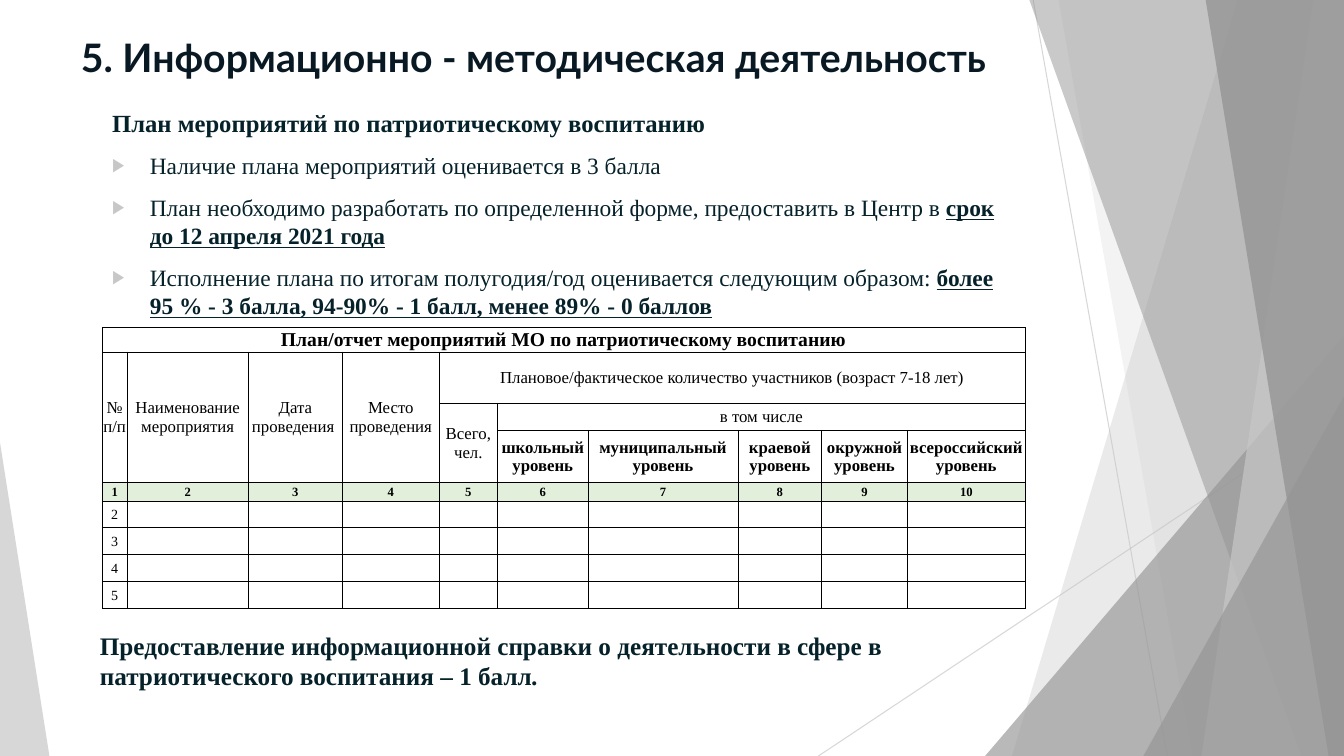
from collections import namedtuple
from dataclasses import dataclass

import pptx
import pptx.dml.color
import pptx.enum.shapes
import pptx.enum.text
import pptx.oxml
import pptx.oxml.ns
import pptx.util

Pt = pptx.util.Pt
qn = pptx.oxml.ns.qn
Align = pptx.enum.text.PP_ALIGN
Anchor = pptx.enum.text.MSO_ANCHOR
Shapes = pptx.enum.shapes.MSO_SHAPE
Box = namedtuple("Box", "left top width height")


@dataclass(frozen=True)
class Theme:
    light: str = "C7C7C7"
    dark: str = "959595"
    title: str = "091924"
    text: str = "05212A"
    black: str = "000000"
    number_row: str = "E2EFDA"
    title_font: str = "Lato"
    body_font: str = "Times New Roman"
    title_size: float = 28
    lead_size: float = 17.6
    body_size: float = 16.7
    note_size: float = 18
    caption_size: float = 14
    header_size: float = 12
    number_size: float = 9
    index_size: float = 10


THEME = Theme()
COLUMNS = [18, 86.4, 67.3, 69.1, 41.7, 64.7, 107.1, 59.8, 61.2, 84.2]
# The caption row grows to the height of its text.
ROWS = [2.9, 36.7, 19.4, 37.2, 13.2, 19.2, 19.2, 19.2, 19.2]
# row, column, rows spanned, columns spanned, wording
HEADERS = [
    (1, 0, 3, 1, "№ п/п"),
    (1, 1, 3, 1, "Наименование мероприятия"),
    (1, 2, 3, 1, "Дата проведения "),
    (1, 3, 3, 1, "Место проведения"),
    (1, 4, 1, 6, "Плановое/фактическое количество участников (возраст 7-18 лет)"),
    (2, 4, 2, 1, "Всего, чел."),
    (2, 5, 1, 5, "в том числе"),
]
LEVELS = ["школьный", "муниципальный", "краевой", "окружной", "всероссийский"]
BULLETS = [
    ("Наличие плана мероприятий оценивается в 3 балла", ""),
    ("План необходимо разработать по определенной форме, предоставить в Центр в ",
     "срок до 12 апреля 2021 года"),
    ("Исполнение плана по итогам полугодия/год оценивается следующим образом: ",
     "более 95 % - 3 балла, 94-90% - 1 балл, менее 89% - 0 баллов"),
]


def rgb(value):
    return pptx.dml.color.RGBColor.from_string(value)


def child(parent, tag, **attributes):
    element = parent.makeelement(qn(tag), attributes)
    parent.append(element)
    return element


def set_opacity(properties, percent):
    color = next(properties.iter(qn("a:srgbClr")))
    child(color, "a:alpha", val=str(percent * 1000))


def paint(shape, color, opacity):
    shape.shadow.inherit = False
    shape.fill.solid()
    shape.fill.fore_color.rgb = rgb(color)
    set_opacity(shape.fill._xPr, opacity)
    shape.line.fill.background()


def add_run(paragraph, text, size, color, font=THEME.body_font, bold=False,
            underline=False, italic=False):
    run = paragraph.add_run()
    run.text = text
    run.font.name = font
    run.font.size = Pt(size)
    run.font.color.rgb = rgb(color)
    run.font.bold = bold
    run.font.underline = underline
    run.font.italic = italic


def add_text_frame(slide, box):
    frame = slide.shapes.add_textbox(*map(Pt, box)).text_frame
    frame.word_wrap = True
    return frame


def add_thin_line(slide, start, end):
    line = slide.shapes.add_connector(
        pptx.enum.shapes.MSO_CONNECTOR.STRAIGHT, *map(Pt, start + end))
    line.line.color.rgb = rgb(THEME.light)
    line.line.width = Pt(0.75)
    properties = line._element.spPr
    set_opacity(properties, 70)
    child(properties, "a:effectLst")


def add_shard(slide, box, top_x, bottom_x, color, opacity):
    """Fill the box to the right of a slanted edge."""
    right, bottom = box.left + box.width, box.top + box.height
    builder = slide.shapes.build_freeform(Pt(box.left + top_x), Pt(box.top))
    corners = [(right, box.top), (right, bottom), (box.left + bottom_x, bottom)]
    builder.add_line_segments([(Pt(x), Pt(y)) for x, y in corners], close=True)
    paint(builder.convert_to_shape(), color, opacity)


def add_triangle(slide, box, apex, color, opacity):
    triangle = slide.shapes.add_shape(Shapes.ISOSCELES_TRIANGLE, *map(Pt, box))
    triangle.adjustments[0] = apex
    paint(triangle, color, opacity)


def add_backdrop(slide, box):
    right, bottom = box.left + box.width, box.top + box.height

    def corner_triangle(width, height):
        area = Box(right - width, bottom - height, width, height)
        add_triangle(slide, area, 1, THEME.dark, 66)

    add_thin_line(slide, (box.left + 738, box.top), (box.left + 833.8, bottom))
    add_thin_line(slide, (right, box.top + 290.2), (box.left + 584.6, bottom))
    shard_box = Box(box.left, box.top - 0.6, box.width, box.height + 0.6)
    add_shard(slide, shard_box, 884.2, 722.9, THEME.light, 36)
    add_shard(slide, shard_box, 756, 851.8, THEME.light, 20)
    corner_triangle(256.3, 300.2)
    add_shard(slide, shard_box, 735.1, 929.5, THEME.dark, 50)
    add_shard(slide, shard_box, 938.2, 858.2, THEME.light, 70)
    add_shard(slide, shard_box, 861.1, 949, THEME.dark, 80)
    corner_triangle(143.3, 257)
    left_corner = Box(box.left, bottom - 223.9, 35.3, 223.9)
    add_triangle(slide, left_corner, 0, THEME.light, 70)


def add_title(slide, box):
    paragraph = add_text_frame(slide, box).paragraphs[0]
    paragraph.alignment = Align.CENTER
    add_run(paragraph, "5. Информационно - методическая деятельность",
            THEME.title_size, THEME.title, THEME.title_font, bold=True)


def add_bullet(paragraph):
    properties = paragraph._p.get_or_add_pPr()
    properties.set("marL", str(Pt(27)))
    properties.set("indent", str(-Pt(27)))
    child(child(properties, "a:buClr"), "a:srgbClr", val=THEME.light)
    child(properties, "a:buSzPct", val="80000")
    child(properties, "a:buFont", typeface=THEME.body_font)
    child(properties, "a:buChar", char="▶")


def add_requirements(slide, box):
    frame = add_text_frame(slide, box)
    lead = frame.paragraphs[0]
    lead.space_before = Pt(10)
    add_run(lead, "План мероприятий по патриотическому воспитанию",
            THEME.lead_size, THEME.text, bold=True)
    for plain, stressed in BULLETS:
        paragraph = frame.add_paragraph()
        paragraph.space_before = Pt(10)
        add_bullet(paragraph)
        add_run(paragraph, plain, THEME.body_size, THEME.text)
        if stressed:
            add_run(paragraph, stressed, THEME.body_size, THEME.text,
                    bold=True, underline=True)


def format_cell(cell, fill=None):
    cell.margin_left = cell.margin_right = cell.margin_top = Pt(0.7)
    cell.margin_bottom = 0
    cell.vertical_anchor = Anchor.MIDDLE
    properties = cell._tc.get_or_add_tcPr()
    for side in ("a:lnL", "a:lnR", "a:lnT", "a:lnB"):
        border = child(properties, side, w=str(Pt(0.5)))
        child(child(border, "a:solidFill"), "a:srgbClr", val=THEME.black)
    if fill:
        cell.fill.solid()
        cell.fill.fore_color.rgb = rgb(fill)
    else:
        cell.fill.background()
    child(cell.text_frame.paragraphs[0]._p, "a:endParaRPr", sz=str(THEME.index_size * 100))


def write_cell(cell, text, size, bold=False):
    paragraph = cell.text_frame.paragraphs[0]
    paragraph.alignment = Align.CENTER
    add_run(paragraph, text, size, THEME.black, bold=bold)


def add_plan_table(slide, box):
    table = slide.shapes.add_table(len(ROWS), len(COLUMNS), *map(Pt, box)).table
    table.first_row = table.horz_banding = False
    for column, width in zip(table.columns, COLUMNS):
        column.width = Pt(width)
    for index, (row, height) in enumerate(zip(table.rows, ROWS)):
        row.height = Pt(height)
        for cell in row.cells:
            format_cell(cell, THEME.number_row if index == 4 else None)

    table.cell(0, 0).merge(table.cell(0, len(COLUMNS) - 1))
    write_cell(table.cell(0, 0), "План/отчет мероприятий МО по патриотическому воспитанию",
               THEME.caption_size, bold=True)
    for row, column, height, width, text in HEADERS:
        cell = table.cell(row, column)
        cell.merge(table.cell(row + height - 1, column + width - 1))
        write_cell(cell, text, THEME.header_size)
    for column, level in enumerate(LEVELS, 5):
        write_cell(table.cell(3, column), f"{level} уровень", THEME.header_size, bold=True)
    for column in range(len(COLUMNS)):
        write_cell(table.cell(4, column), str(column + 1), THEME.number_size, bold=True)
    for row in range(5, len(ROWS)):
        write_cell(table.cell(row, 0), str(row - 3), THEME.index_size)


def add_note(slide, box):
    paragraph = add_text_frame(slide, box).paragraphs[0]
    add_run(paragraph, "Предоставление информационной справки о деятельности в сфере в "
            "патриотического воспитания – 1 балл", THEME.note_size, THEME.text, bold=True)
    add_run(paragraph, ".", THEME.note_size, THEME.text, bold=True, italic=True)


def main():
    presentation = pptx.Presentation()
    presentation.slide_width, presentation.slide_height = Pt(960), Pt(540)
    slide = presentation.slides.add_slide(presentation.slide_layouts[6])
    add_backdrop(slide, Box(0, 0, 960, 540))
    add_title(slide, Box(31, 20.2, 699.8, 53.3))
    add_requirements(slide, Box(73, 73.4, 650.9, 144.7))
    add_plan_table(slide, Box(72.9, 233.8, sum(COLUMNS), sum(ROWS)))
    add_note(slide, Box(64.3, 446.4, 676.8, 51.1))
    presentation.save("out.pptx")


if __name__ == "__main__":
    main()
